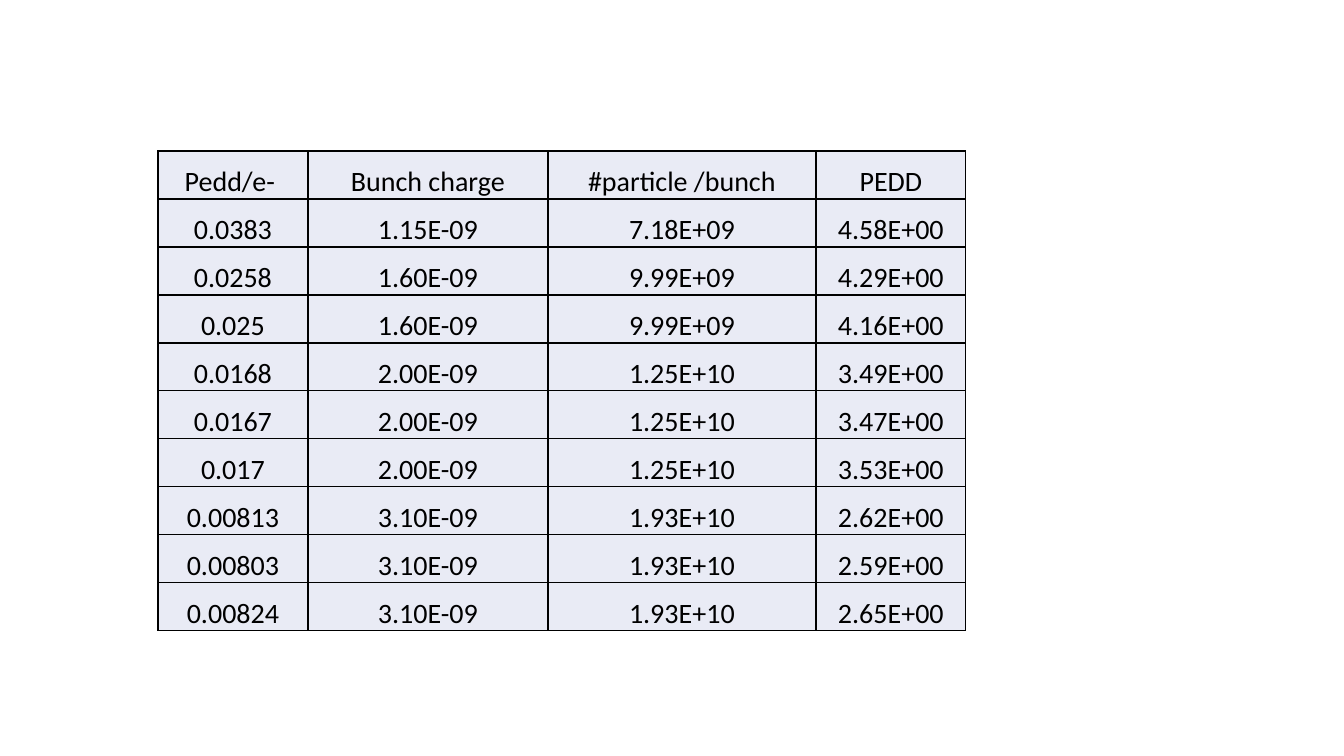
"""Build a slide with a table of peak energy density per bunch charge."""
from lxml import etree
from pptx import Presentation
from pptx.dml.color import RGBColor
from pptx.enum.text import MSO_ANCHOR, PP_ALIGN
from pptx.oxml.ns import qn
from pptx.util import Pt

BOTTOM = MSO_ANCHOR.BOTTOM
CENTER = PP_ALIGN.CENTER
BLACK = RGBColor(0x00, 0x00, 0x00)
PALE = RGBColor(0xE9, 0xEB, 0xF5)
SCALE = 914400 / 100.8
WIDTHS = [150, 240, 268, 150]
ROW_H = 48
ROWS = [
    ["Pedd/e- ", "Bunch charge", "#particle /bunch", "PEDD"],
    ["0.0383", "1.15E-09", "7.18E+09", "4.58E+00"],
    ["0.0258", "1.60E-09", "9.99E+09", "4.29E+00"],
    ["0.025", "1.60E-09", "9.99E+09", "4.16E+00"],
    ["0.0168", "2.00E-09", "1.25E+10", "3.49E+00"],
    ["0.0167", "2.00E-09", "1.25E+10", "3.47E+00"],
    ["0.017", "2.00E-09", "1.25E+10", "3.53E+00"],
    ["0.00813", "3.10E-09", "1.93E+10", "2.62E+00"],
    ["0.00803", "3.10E-09", "1.93E+10", "2.59E+00"],
    ["0.00824", "3.10E-09", "1.93E+10", "2.65E+00"],
]


def px(num):
    return round(num * SCALE)


CELL = {
    "vertical_anchor": BOTTOM,
    "margin_left": px(1),
    "margin_right": px(1),
    "margin_top": px(1),
    "margin_bottom": 0,
}
FONT = {"name": "Calibri", "size": Pt(20), "bold": False}
BANDS = {"first_row": False, "horz_banding": False}


def style(item, form):
    for name, value in form.items():
        setattr(item, name, value)


def add_edges(cell):
    props = cell._tc.get_or_add_tcPr()
    for side in ("a:lnL", "a:lnR", "a:lnT", "a:lnB"):
        line = etree.SubElement(props, qn(side), w=str(Pt(1)))
        fill = etree.SubElement(line, qn("a:solidFill"))
        etree.SubElement(fill, qn("a:srgbClr"), val=str(BLACK))


def fill_cell(cell, text):
    style(cell, CELL)
    add_edges(cell)
    cell.fill.solid()
    cell.fill.fore_color.rgb = PALE
    para = cell.text_frame.paragraphs[0]
    para.alignment = CENTER
    run = para.add_run()
    run.text = text
    style(run.font, FONT)
    run.font.color.rgb = BLACK


def add_grid(slide, left, top):
    frame = slide.shapes.add_table(
        len(ROWS), len(WIDTHS), px(left), px(top),
        px(sum(WIDTHS)), px(ROW_H * len(ROWS)))
    table = frame.table
    style(table, BANDS)
    for col, width in zip(table.columns, WIDTHS):
        col.width = px(width)
    for row, texts in zip(table.rows, ROWS):
        row.height = px(ROW_H)
        for cell, text in zip(row.cells, texts):
            fill_cell(cell, text)


def main():
    deck = Presentation()
    style(deck, {"slide_width": px(1344), "slide_height": px(756)})
    slide = deck.slides.add_slide(deck.slide_layouts[6])
    add_grid(slide, 158, 151)
    deck.save("out.pptx")


if __name__ == "__main__":
    main()
